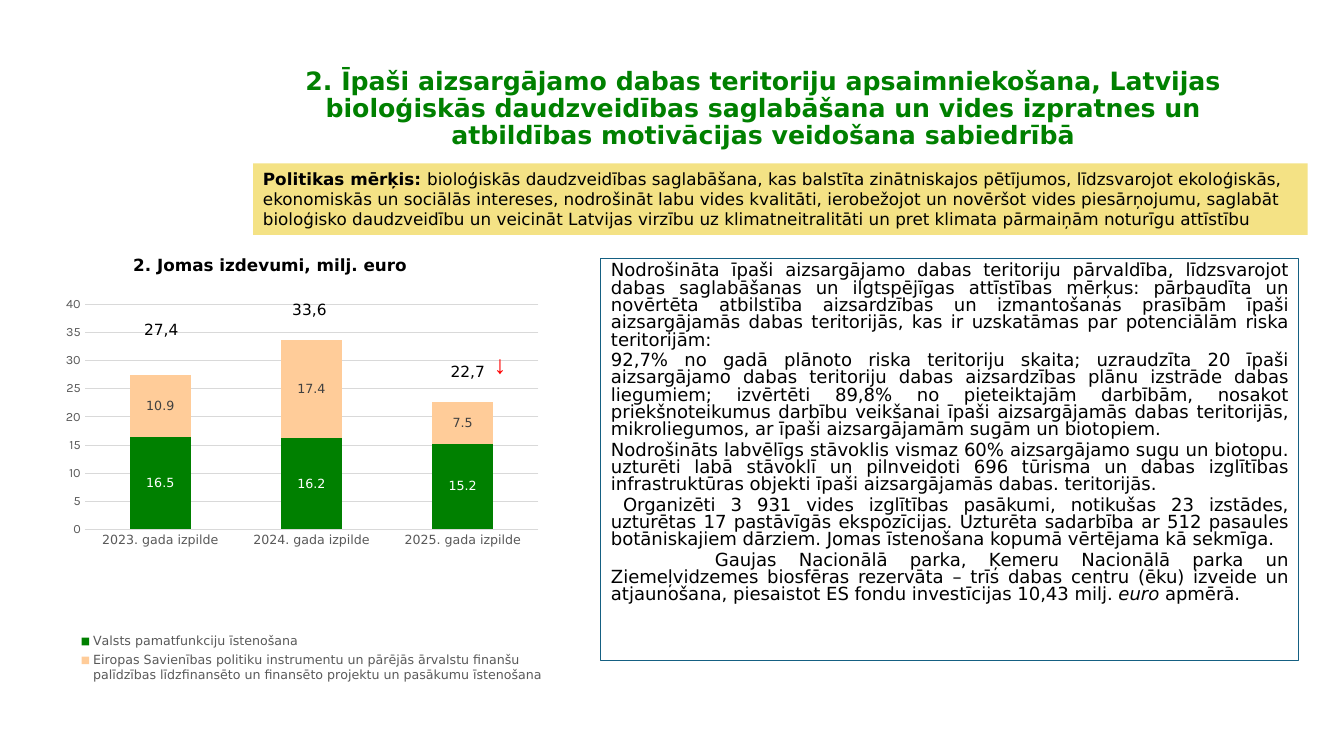
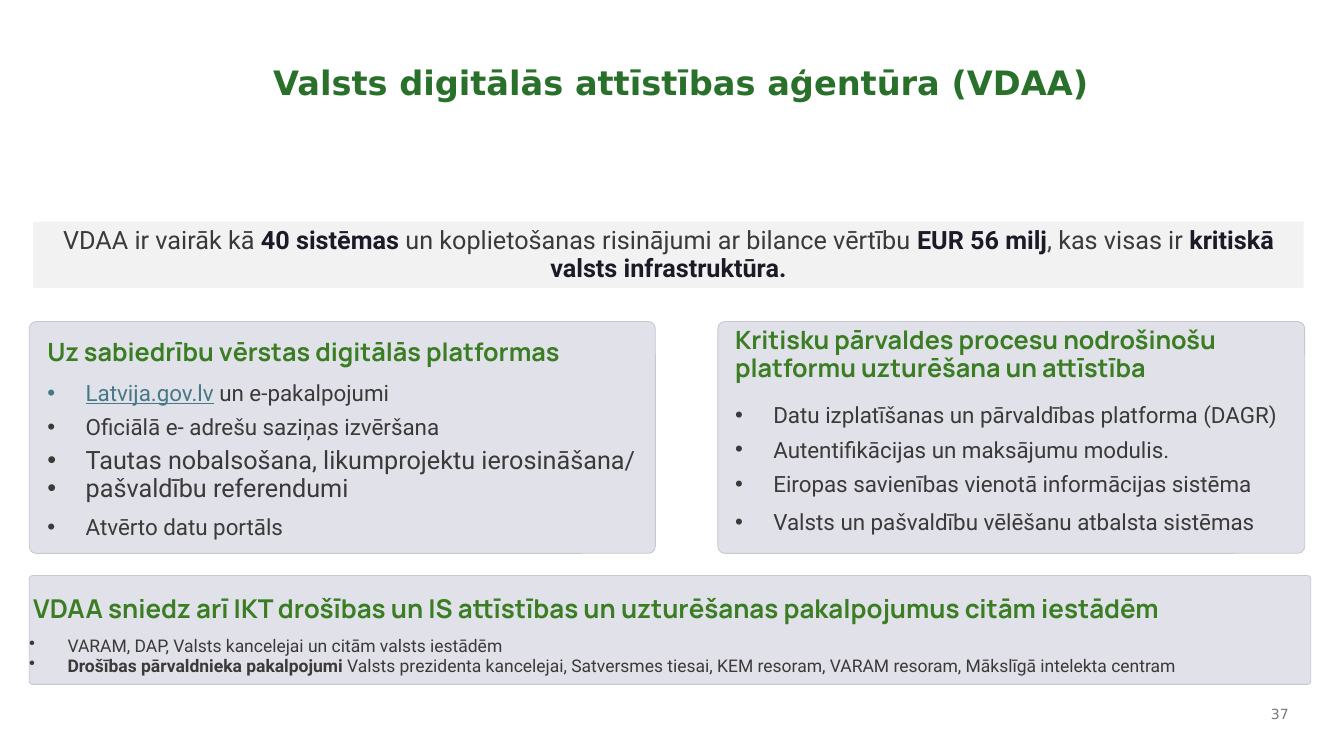
"""Build two slides on nature policy spending and the state digital agency."""
import pptx
import pptx.chart.data
import pptx.dml.color
import pptx.enum.chart
import pptx.enum.shapes
import pptx.enum.text
import pptx.oxml.ns
import pptx.util
from lxml import etree

PX = 9144
SANS, BODY, HEAD = "DejaVu Sans", "Roboto", "Manrope"
HUE = {
    "green": "008000", "forest": "29702A", "leaf": "3B7D23", "peach": "FFCC99",
    "sand": "F4E285", "panel": "E1E1EA", "edge": "C7C7D0", "band": "F2F2F2",
    "blue": "156082", "link": "467886", "ink": "3C3939", "dark": "1B1B27",
    "black": "000000", "white": "FFFFFF", "red": "FF0000", "label": "404040",
    "axis": "595959", "grid": "D9D9D9", "page": "797979",
}

GOALS = {
    "title": "2. Īpaši aizsargājamo dabas teritoriju apsaimniekošana, Latvijas bioloģiskās daudzveidības saglabāšana un vides izpratnes un atbildības motivācijas veidošana sabiedrībā",
    "aim": [("Politikas mērķis: ", {"bold": True}),
            "bioloģiskās daudzveidības saglabāšana, kas balstīta zinātniskajos pētījumos, līdzsvarojot ekoloģiskās, ekonomiskās un sociālās intereses, nodrošināt labu vides kvalitāti, ierobežojot un novēršot vides piesārņojumu, saglabāt bioloģisko daudzveidību un veicināt Latvijas virzību uz klimatneitralitāti un pret klimata pārmaiņām noturīgu attīstību"],
    "results": [
        "Nodrošināta īpaši aizsargājamo dabas teritoriju pārvaldība, līdzsvarojot dabas saglabāšanas un ilgtspējīgas attīstības mērķus: pārbaudīta un novērtēta atbilstība aizsardzības un izmantošanas prasībām īpaši aizsargājamās dabas teritorijās, kas ir uzskatāmas par potenciālām riska teritorijām:",
        "92,7% no gadā plānoto riska teritoriju skaita; uzraudzīta 20 īpaši aizsargājamo dabas teritoriju dabas aizsardzības plānu izstrāde dabas liegumiem; izvērtēti 89,8% no pieteiktajām darbībām, nosakot priekšnoteikumus darbību veikšanai īpaši aizsargājamās dabas teritorijās, mikroliegumos, ar īpaši aizsargājamām sugām un biotopiem.",
        "Nodrošināts labvēlīgs stāvoklis vismaz 60% aizsargājamo sugu un biotopu. uzturēti labā stāvoklī un pilnveidoti 696 tūrisma un dabas izglītības infrastruktūras objekti īpaši aizsargājamās dabas. teritorijās.",
        "Organizēti 3 931 vides izglītības pasākumi, notikušas 23 izstādes, uzturētas 17 pastāvīgās ekspozīcijas. Uzturēta sadarbība ar 512 pasaules botāniskajiem dārziem. Jomas īstenošana kopumā vērtējama kā sekmīga.",
        ["Gaujas Nacionālā parka, Ķemeru Nacionālā parka un Ziemeļvidzemes biosfēras rezervāta – trīs dabas centru (ēku) izveide un atjaunošana, piesaistot ES fondu investīcijas 10,43 milj. ",
         ("euro", {"italic": True}), " apmērā."],
    ],
    "years": ["2023. gada izpilde", "2024. gada izpilde", "2025. gada izpilde"],
    "series": [
        ("Valsts pamatfunkciju īstenošana", (16.5, 16.2, 15.2), "green", "white"),
        ("Eiropas Savienības politiku instrumentu un pārējās ārvalstu finanšu palīdzības līdzfinansēto un finansēto projektu un pasākumu īstenošana",
         (10.9, 17.4, 7.5), "peach", "label"),
    ],
    "totals": [("27,4", 133, 313), ("33,6", 280, 293), ("22,7", 437, 354)],
}

STRONG = {"color": "dark", "bold": True}
PANELS = [(29, 319, 621, 230), (712, 319, 582, 230), (29, 571, 1271, 108)]
AGENCY = {
    "title": "Valsts digitālās attīstības aģentūra (VDAA)",
    "lead": ["VDAA ir vairāk kā ", ("40 sistēmas", STRONG),
             " un koplietošanas risinājumi ar bilance vērtību ", ("EUR 56 milj", STRONG),
             ", kas visas ir ", ("kritiskā valsts infrastruktūra.", STRONG)],
    "groups": [
        {"head": "Uz sabiedrību vērstas digitālās platformas", "place": (47, 337, 600, 27),
         "items": [[("Latvija.gov.lv", {"color": "link", "underline": True}), " un e-pakalpojumi"],
                   "Oficiālā e- adrešu saziņas izvēršana",
                   [("Tautas nobalsošana, likumprojektu ierosināšana/", {"size": 18})],
                   [("pašvaldību referendumi", {"size": 18})],
                   "Atvērto datu portāls"],
         "box": (47, 375, 600, 161), "gaps": (0, 4.5, 4.5, 0, 6.8)},
        {"head": "Kritisku pārvaldes procesu nodrošinošu platformu uzturēšana un attīstība",
         "place": (729, 325, 518, 54),
         "items": ["Datu izplatīšanas un pārvaldības platforma (DAGR)",
                   "Autentifikācijas un maksājumu modulis.",
                   "Eiropas savienības vienotā informācijas sistēma",
                   "Valsts un pašvaldību vēlēšanu atbalsta sistēmas"],
         "box": (729, 397, 560, 134), "gaps": (0, 4.5, 4.5, 7.4)},
    ],
    "other": "VDAA sniedz arī IKT drošības un IS attīstības un uzturēšanas pakalpojumus citām iestādēm",
    "clients": ["VARAM, DAP, Valsts kancelejai un citām valsts iestādēm",
                [("Drošības pārvaldnieka pakalpojumi ", {"bold": True}),
                 "Valsts prezidenta kancelejai, Satversmes tiesai, KEM resoram, VARAM resoram, Mākslīgā intelekta centram"]],
}


def tint(name):
    return pptx.dml.color.RGBColor.from_string(HUE[name])


def style(font, size, color, face=SANS, bold=False, italic=False, underline=False):
    font.size, font.name = pptx.util.Pt(size), face
    font.bold, font.italic, font.underline = bold, italic, underline
    font.color.rgb = tint(color)


def write(shape, paras, align="LEFT", anchor="TOP", inset=(10, 5), line=1.0,
          gaps=(), firsts=(), bullet=False, **look):
    """Fill a shape with paragraphs of plain or specially formatted runs."""
    frame = shape.text_frame
    frame.auto_size = pptx.enum.text.MSO_AUTO_SIZE.NONE
    frame.word_wrap = True
    frame.vertical_anchor = getattr(pptx.enum.text.MSO_ANCHOR, anchor)
    frame.margin_left = frame.margin_right = inset[0] * PX
    frame.margin_top = frame.margin_bottom = inset[1] * PX
    for i, runs in enumerate(paras):
        para = frame.paragraphs[0] if i == 0 else frame.add_paragraph()
        props = para._p.get_or_add_pPr()
        first = firsts[i] if firsts else 0
        props.set("marL", str(38 * PX if bullet else 0))
        props.set("indent", str(-38 * PX if bullet else first * PX))
        mark = etree.SubElement(props, pptx.oxml.ns.qn("a:buChar" if bullet else "a:buNone"))
        if bullet:
            mark.set("char", "•")
        para.alignment = getattr(pptx.enum.text.PP_ALIGN, align)
        para.line_spacing = line
        para.space_before = pptx.util.Pt(gaps[i] if gaps else 0)
        for part in [runs] if isinstance(runs, str) else runs:
            words, extra = (part, {}) if isinstance(part, str) else part
            run = para.add_run()
            run.text = words
            style(run.font, **{**look, **extra})
    return shape


def move(shape, box):
    shape.left, shape.top, shape.width, shape.height = [n * PX for n in box]
    return shape


def label(slide, box, paras, **look):
    shape = slide.shapes.add_textbox(*[n * PX for n in box])
    return write(shape, paras, **look)


def block(slide, box, fill, kind="RECTANGLE"):
    form = getattr(pptx.enum.shapes.MSO_SHAPE, kind)
    shape = slide.shapes.add_shape(form, *[n * PX for n in box])
    shape.shadow.inherit = False
    shape.fill.solid()
    shape.fill.fore_color.rgb = tint(fill)
    shape.line.fill.background()
    return shape


def stroke(line, color, width):
    line.color.rgb = tint(color)
    line.width = pptx.util.Pt(width)


def start(deck, layout, title, box, **look):
    slide = deck.slides.add_slide(deck.slide_layouts[layout])
    write(move(slide.shapes.title, box), [title], anchor="MIDDLE", line=0.9, bold=True, **look)
    return slide


def layout(node, index, box, inner=False):
    """Pin a chart part to fractions of the chart area."""
    qn = pptx.oxml.ns.qn
    for old in node.findall(qn("c:layout")):
        node.remove(old)
    outer = etree.Element(qn("c:layout"))
    manual = etree.SubElement(outer, qn("c:manualLayout"))
    rules = [("layoutTarget", "inner")] if inner else []
    rules += [("xMode", "edge"), ("yMode", "edge"), *zip("xywh", box)]
    for tag, val in rules:
        etree.SubElement(manual, qn("c:" + tag)).set("val", str(val))
    node.insert(index, outer)


def plot(slide, box):
    kinds = pptx.enum.chart
    data = pptx.chart.data.CategoryChartData()
    data.categories = GOALS["years"]
    for name, vals, *_ in GOALS["series"]:
        data.add_series(name, vals)
    chart = slide.shapes.add_chart(kinds.XL_CHART_TYPE.COLUMN_STACKED,
                                   *[n * PX for n in box], data).chart
    style(chart.font, 10, "black", "Karla")
    chart.has_title = False
    bars = chart.plots[0]
    bars.gap_width, bars.overlap, bars.vary_by_categories = 150, 100, False
    for row, (*_, fill, color) in zip(bars.series, GOALS["series"]):
        row.format.fill.solid()
        row.format.fill.fore_color.rgb = tint(fill)
        tags = row.data_labels
        tags.show_value = True
        tags.position = kinds.XL_LABEL_POSITION.CENTER
        style(tags.font, 9, color)
    cats, vals = chart.category_axis, chart.value_axis
    for axis, face in ((cats, SANS), (vals, "Karla")):
        axis.major_tick_mark = axis.minor_tick_mark = kinds.XL_TICK_MARK.NONE
        style(axis.tick_labels.font, 9, "axis", face)
    stroke(cats.format.line, "grid", 0.75)
    vals.format.line.fill.background()
    vals.minimum_scale, vals.maximum_scale, vals.major_unit = 0, 40, 5
    stroke(vals.major_gridlines.format.line, "grid", 0.75)
    chart.has_legend = True
    key = chart.legend
    key.position = kinds.XL_LEGEND_POSITION.BOTTOM
    key.include_in_layout = False
    style(key.font, 9, "axis")
    layout(bars._element.getparent(), 0, (0.05, 0.05, 0.9, 0.56), inner=True)
    layout(key._element, 1, (0.03, 0.86, 0.94, 0.14))


def goals(deck):
    slide = start(deck, 1, GOALS["title"], (273, 50, 968, 117),
                  align="CENTER", size=18, color="green")
    text = {"color": "black"}
    label(slide, (48, 247, 440, 33), ["2. Jomas izdevumi, milj. euro"], align="CENTER",
          anchor="MIDDLE", line=0.9, size=12, bold=True, **text)
    body = move(slide.placeholders[1], (596, 256, 692, 399))
    stroke(body.line, "blue", 0.75)
    write(body, GOALS["results"], align="JUSTIFY", line=0.8, size=12.9,
          gaps=(0, 2.1, 2.1, 2.1, 2.1), firsts=(0, 0, 0, 12, 103), **text)
    write(block(slide, (251, 162, 1046, 71), "sand"), [GOALS["aim"]], size=12, **text)
    plot(slide, (59, 282, 500, 399))
    for total, left, top in GOALS["totals"]:
        label(slide, (left, top, 61, 29), [total], size=11, **text)
    arrow = label(slide, (480, 348, 32, 40), ["↑"], size=18, color="red", face="Arial", bold=True)
    arrow.rotation = 180


def agency(deck):
    slide = start(deck, 4, AGENCY["title"], (261, 42, 889, 84), size=24, color="forest")
    for box in PANELS:
        panel = block(slide, box, "panel", "ROUNDED_RECTANGLE")
        panel.adjustments[0] = 0.03
        stroke(panel.line, "edge", 0.6)
        slide.shapes._spTree.insert(2, panel._element)
    head = {"inset": (0, 0), "color": "leaf", "face": HEAD, "bold": True}
    text = {"color": "ink", "face": BODY}
    points = {"inset": (0, 0), "bullet": True, **text}
    line = pptx.util.Pt(20)
    for i, group in enumerate(AGENCY["groups"]):
        write(move(slide.placeholders[2 * i + 1], group["place"]), [group["head"]],
              line=pptx.util.Pt(19.5), size=18, **head)
        write(move(slide.placeholders[2 * i + 2], group["box"]), group["items"],
              line=line, gaps=group["gaps"], size=16, **points)
    label(slide, (33, 587, 1240, 33), [AGENCY["other"]], line=pptx.util.Pt(23), size=18.5, **head)
    label(slide, (29, 631, 1260, 40), AGENCY["clients"], line=pptx.util.Pt(14.4),
          size=12.5, **points)
    write(block(slide, (33, 220, 1260, 66), "band"), [AGENCY["lead"]], align="CENTER",
          line=line, size=18, **text)
    label(slide, (1244, 692, 44, 33), ["37"], align="RIGHT", anchor="MIDDLE",
          size=10, color="page")


def main():
    deck = pptx.Presentation()
    deck.slide_width, deck.slide_height = 1333 * PX, 750 * PX
    goals(deck)
    agency(deck)
    deck.save("out.pptx")


if __name__ == "__main__":
    main()
